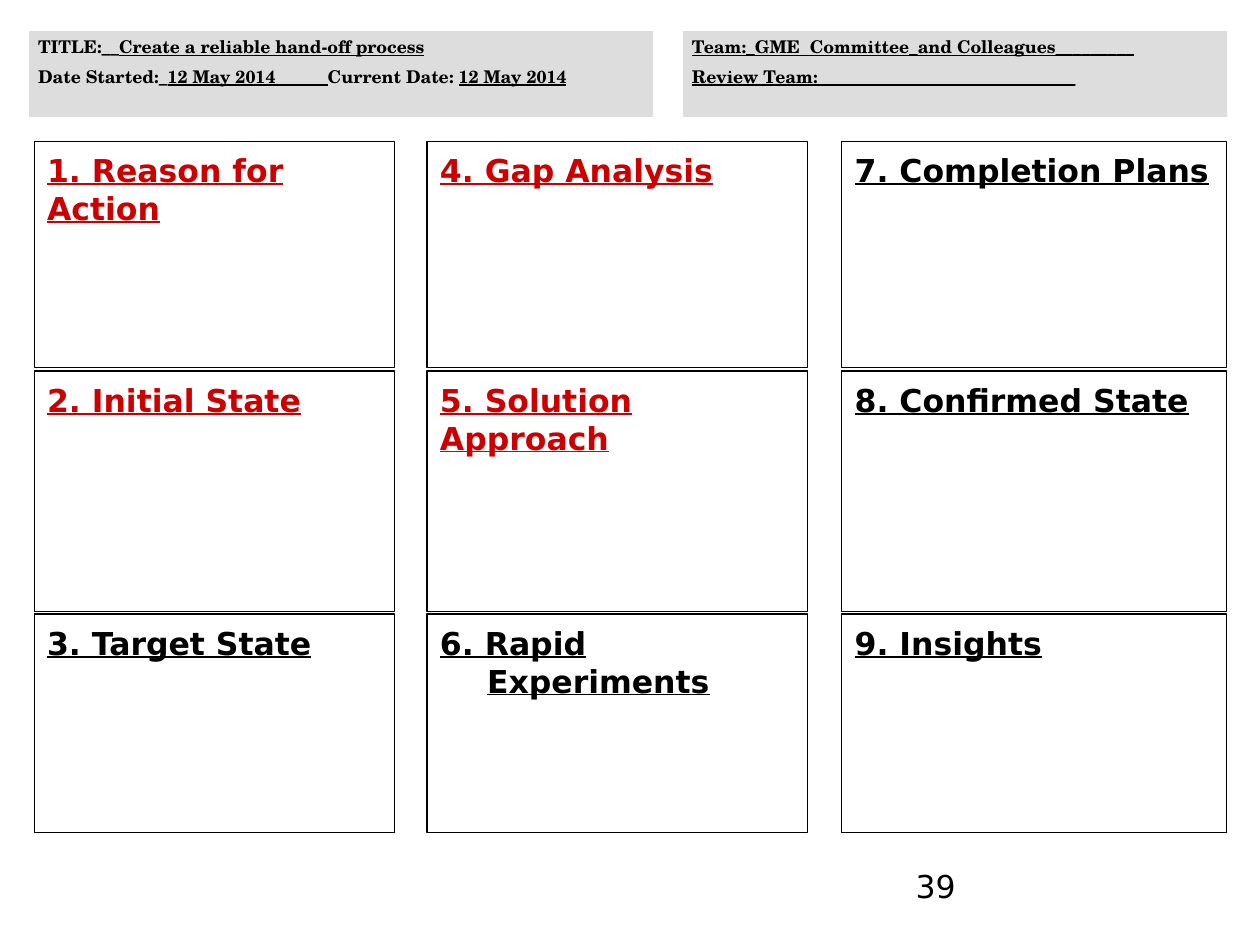
from dataclasses import dataclass

from pptx import Presentation
from pptx.dml.color import RGBColor
from pptx.enum.shapes import MSO_SHAPE
from pptx.enum.text import MSO_ANCHOR, PP_ALIGN
from pptx.oxml import parse_xml
from pptx.oxml.ns import nsdecls
from pptx.util import Cm, Pt

RECTANGLE = MSO_SHAPE.RECTANGLE
TOP = MSO_ANCHOR.TOP
LEFT = PP_ALIGN.LEFT


@dataclass(frozen=True)
class Theme:
    black: RGBColor = RGBColor(0x00, 0x00, 0x00)
    red: RGBColor = RGBColor(0xCC, 0x00, 0x00)
    grey: RGBColor = RGBColor(0xDD, 0xDD, 0xDD)
    sans: str = "DejaVu Sans"
    serif: str = "TeX Gyre Schola"
    heading: int = 18
    label: int = 10
    border: float = 0.75


THEME = Theme()

# Grid bands in centimetres: (start, extent)
COLUMNS = [(0.69, 7.26), (8.61, 7.67), (16.97, 7.75)]
ROWS = [(2.85, 4.56), (7.48, 4.85), (12.38, 4.41)]

# Each column, top to bottom: (heading, finished, hanging indent)
PANELS = [
    [("1. Reason for Action", True, False),
     ("2. Initial State", True, False),
     ("3. Target State", False, True)],
    [("4. Gap Analysis", True, False),
     ("5. Solution Approach", True, False),
     ("6. Rapid Experiments", False, True)],
    [("7. Completion Plans", False, True),
     ("8. Confirmed State", False, True),
     ("9. Insights", False, True)],
]

# Header lines as (text, underlined) spans
PROJECT_LINES = [
    [("TITLE:__", False), ("Create a reliable hand-off process\t", True)],
    [("Date Started:_", False), ("12 May 2014______", True),
     ("Current Date: ", False), ("12 May 2014", True)],
]
TEAM_LINES = [
    [("Team:_GME  Committee_and Colleagues_________", True)],
    [("Review Team: _____________________________", True)],
]


def set_frame(box, inset_x, inset_y):
    frame = box.text_frame
    frame.word_wrap = True
    frame.vertical_anchor = TOP
    frame.margin_left = frame.margin_right = Cm(inset_x)
    frame.margin_top = frame.margin_bottom = Cm(inset_y)
    return frame


def add_span(para, text, font, size, color, bold=True, underline=False):
    span = para.add_run()
    span.text = text
    span.font.name = font
    span.font.size = Pt(size)
    span.font.color.rgb = color
    span.font.bold = bold
    span.font.underline = underline


def add_rectangle(page, left, top, width, height):
    box = page.shapes.add_shape(RECTANGLE, Cm(left), Cm(top), Cm(width), Cm(height))
    box.shadow.inherit = False
    return box


def add_tab_stop(para, position):
    stops = parse_xml(
        f'<a:tabLst {nsdecls("a")}><a:tab pos="{Cm(position)}" algn="l"/></a:tabLst>')
    para._p.get_or_add_pPr().append(stops)


def add_header(page, left, top, width, height, lines):
    box = add_rectangle(page, left, top, width, height)
    box.fill.solid()
    box.fill.fore_color.rgb = THEME.grey
    box.line.fill.background()
    frame = set_frame(box, 0.18, 0.1)
    for number, spans in enumerate(lines):
        para = frame.paragraphs[0] if number == 0 else frame.add_paragraph()
        if any("\t" in text for text, _ in spans):
            add_tab_stop(para, 9.5)
        para.alignment = LEFT
        if number:
            para.space_before = Pt(THEME.label / 2)
        for text, underline in spans:
            add_span(para, text, THEME.serif, THEME.label, THEME.black,
                     underline=underline)


def add_panel(page, left, top, width, height, heading, finished, hanging):
    box = add_rectangle(page, left, top, width, height)
    box.fill.background()
    box.line.color.rgb = THEME.black
    box.line.width = Pt(THEME.border)
    para = set_frame(box, 0.26, 0.2).paragraphs[0]
    para.alignment = LEFT
    if hanging:
        properties = para._p.get_or_add_pPr()
        properties.set("marL", str(Cm(0.95)))
        properties.set("indent", str(-Cm(0.95)))
    color = THEME.red if finished else THEME.black
    add_span(para, heading, THEME.sans, THEME.heading, color, underline=True)


def add_page_number(page, left, top, width, height, number):
    box = page.shapes.add_textbox(Cm(left), Cm(top), Cm(width), Cm(height))
    para = set_frame(box, 0.25, 0.13).paragraphs[0]
    add_span(para, number, THEME.sans, THEME.heading, THEME.black, bold=False)


def main():
    deck = Presentation()
    deck.slide_width, deck.slide_height = Cm(25.4), Cm(19.05)
    page = deck.slides.add_slide(deck.slide_layouts[6])

    # Header bands
    add_header(page, 0.59, 0.63, 12.58, 1.73, PROJECT_LINES)
    add_header(page, 13.77, 0.63, 10.97, 1.73, TEAM_LINES)

    # Nine-panel grid
    for (left, width), panels in zip(COLUMNS, PANELS):
        for (top, height), panel in zip(ROWS, panels):
            add_panel(page, left, top, width, height, *panel)

    # Page number
    add_page_number(page, 18.21, 17.35, 5.92, 1.32, "39")
    deck.save("out.pptx")


if __name__ == "__main__":
    main()
